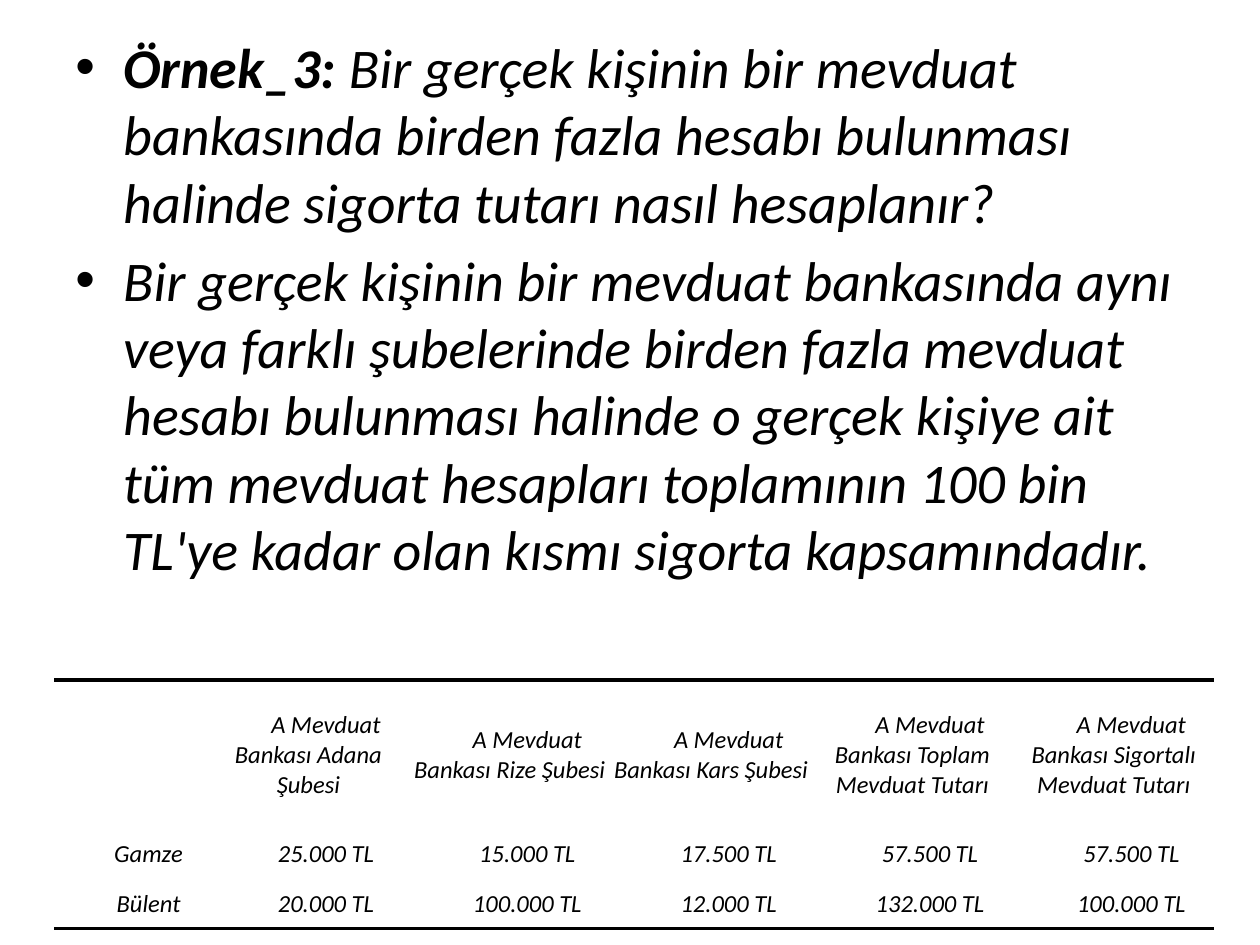
from lxml.etree import SubElement
from pptx import Presentation
from pptx.dml.color import RGBColor
from pptx.enum.text import MSO_ANCHOR, PP_ALIGN
from pptx.oxml.ns import qn
from pptx.util import Inches, Pt

BLACK = RGBColor(0, 0, 0)
FONT = "Calibri"
RULE_WIDTH = 2.5

STATEMENTS = [
    [("Örnek_3: ", True),
     ("Bir gerçek kişinin bir mevduat bankasında birden fazla hesabı "
      "bulunması halinde sigorta tutarı nasıl hesaplanır?", False)],
    [("Bir gerçek kişinin bir mevduat bankasında aynı veya farklı şubelerinde "
      "birden fazla mevduat hesabı bulunması halinde o gerçek kişiye ait tüm "
      "mevduat hesapları toplamının 100 bin TL'ye kadar olan kısmı sigorta "
      "kapsamındadır.", False)],
]

HEADINGS = ["Adana Şubesi", "Rize Şubesi", "Kars Şubesi",
            "Toplam Mevduat Tutarı", "Sigortalı Mevduat Tutarı"]
DEPOSITS = [
    [""] + [f"A Mevduat Bankası {heading}" for heading in HEADINGS],
    ["Gamze"] + [f"{amount} TL" for amount in
                 ("25.000", "15.000", "17.500", "57.500", "57.500")],
    ["Bülent"] + [f"{amount} TL" for amount in
                  ("20.000", "100.000", "12.000", "132.000", "100.000")],
]
COLUMN_WIDTHS = [1.22] + [1.6] * 5
ROW_HEIGHTS = [1.18, 0.39, 0.39]


def style_paragraph(paragraph, size, left, indent):
    font = paragraph.font
    font.name, font.size, font.italic = FONT, Pt(size), True
    font.color.rgb = BLACK
    properties = paragraph._p.get_or_add_pPr()
    properties.set("marL", str(Inches(left)))
    properties.set("indent", str(Inches(indent)))
    return properties


def add_bullet(properties):
    bullet_font = properties.makeelement(qn("a:buFont"), {"typeface": "Arial"})
    bullet = properties.makeelement(qn("a:buChar"), {"char": "•"})
    defaults = properties.find(qn("a:defRPr"))
    defaults.addprevious(bullet_font)
    defaults.addprevious(bullet)


def add_statements(slide, left, top, width, height):
    frame = slide.shapes.add_textbox(left, top, width, height).text_frame
    frame.word_wrap = True
    for index, statement in enumerate(STATEMENTS):
        paragraph = frame.add_paragraph() if index else frame.paragraphs[0]
        paragraph.space_before = Pt(6.4)
        for words, bold in statement:
            run = paragraph.add_run()
            run.text, run.font.bold = words, bold
        add_bullet(style_paragraph(paragraph, 32, 0.38, -0.38))


def set_borders(cell, ruled_sides):
    properties = cell._tc.get_or_add_tcPr()
    for side in "LRTB":
        border = SubElement(properties, qn(f"a:ln{side}"))
        if side in ruled_sides:
            border.set("w", str(Pt(RULE_WIDTH)))
            fill = SubElement(border, qn("a:solidFill"))
            SubElement(fill, qn("a:srgbClr"), val=str(BLACK))
        else:
            SubElement(border, qn("a:noFill"))


def fill_cell(cell, words, ruled_sides):
    set_borders(cell, ruled_sides)
    cell.fill.background()
    cell.margin_left = cell.margin_right = 0
    cell.margin_top = cell.margin_bottom = 0
    cell.vertical_anchor = MSO_ANCHOR.MIDDLE
    cell.text = words
    paragraph = cell.text_frame.paragraphs[0]
    paragraph.alignment = PP_ALIGN.CENTER
    paragraph.space_after = Pt(6)
    style_paragraph(paragraph, 14, 0, 0.28)


def add_deposits(slide, left, top, width, height):
    table = slide.shapes.add_table(len(DEPOSITS), len(COLUMN_WIDTHS),
                                   left, top, width, height).table
    table.first_row = table.horz_banding = False
    for column, share in zip(table.columns, COLUMN_WIDTHS):
        column.width = int(width * share / sum(COLUMN_WIDTHS))
    for row, share in zip(table.rows, ROW_HEIGHTS):
        row.height = int(height * share / sum(ROW_HEIGHTS))
    rules = ["T"] + [""] * (len(DEPOSITS) - 2) + ["B"]
    for row, entries, ruled_sides in zip(table.rows, DEPOSITS, rules):
        for cell, words in zip(row.cells, entries):
            fill_cell(cell, words, ruled_sides)


def main():
    deck = Presentation()
    deck.slide_width, deck.slide_height = Inches(10), Inches(7.5)
    slide = deck.slides.add_slide(deck.slide_layouts[6])
    add_statements(slide, Inches(0.5), Inches(0.21), Inches(9), Inches(4.8))
    add_deposits(slide, Inches(0.43), Inches(5.4), Inches(9.21), Inches(1.97))
    deck.save("out.pptx")


if __name__ == "__main__":
    main()
